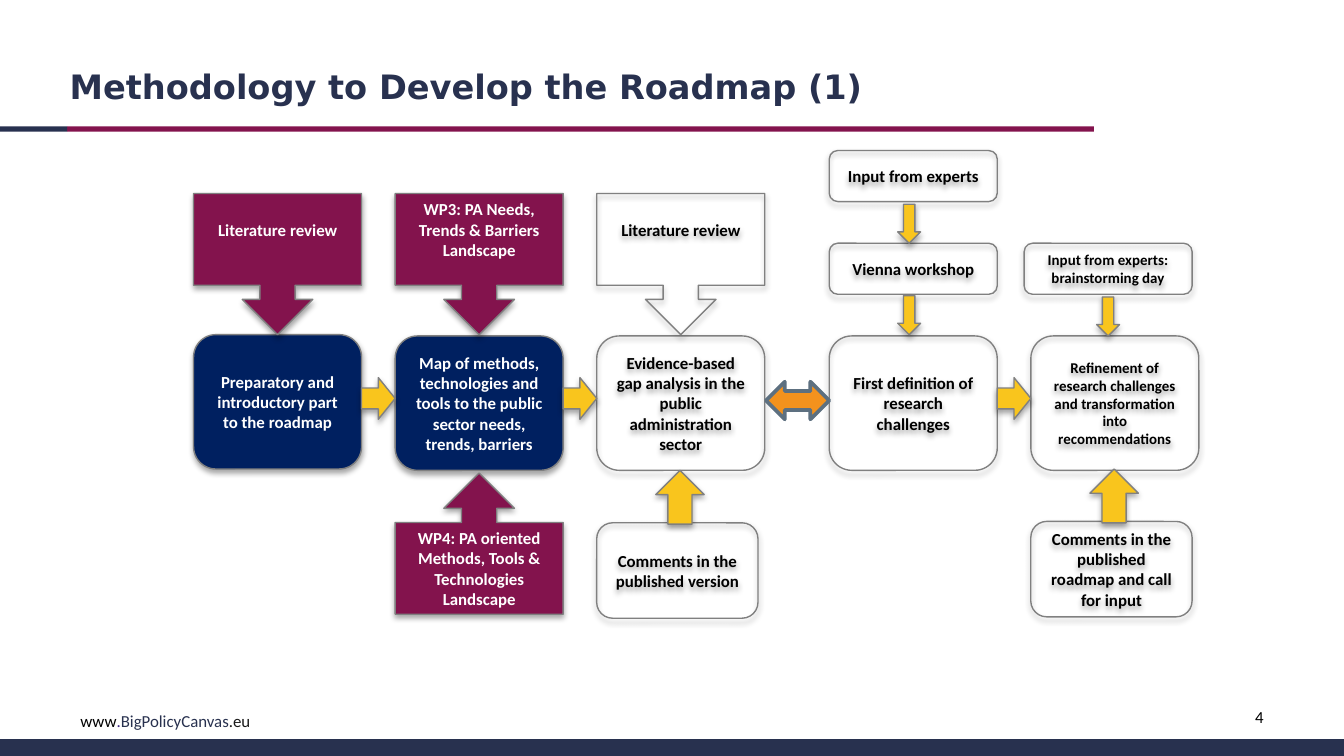
import dataclasses

import pptx
import pptx.dml.color
import pptx.enum.shapes
import pptx.enum.text
import pptx.oxml
import pptx.oxml.ns
import pptx.util

Inches = pptx.util.Inches
Shape = pptx.enum.shapes.MSO_SHAPE
Align = pptx.enum.text.PP_ALIGN
Anchor = pptx.enum.text.MSO_ANCHOR


@dataclasses.dataclass(frozen=True)
class Theme:
    ink: str = "28314F"
    plum: str = "83134D"
    navy: str = "002060"
    yellow: str = "F9C51D"
    orange: str = "F3921D"
    slate: str = "5D7080"
    gray: str = "808080"
    violet: str = "3E2984"
    charcoal: str = "191919"
    black: str = "000000"
    white: str = "FFFFFF"
    body_font: str = "Calibri"
    title_font: str = "DejaVu Sans"
    title_size: int = 18
    body_size: int = 9
    small_size: int = 8
    thin: float = 0.75
    thick: float = 2


THEME = Theme()


def rgb(color):
    return pptx.dml.color.RGBColor.from_string(color)


def write_text(shape, parts, size=THEME.body_size, font=THEME.body_font, bold=False,
               align=Align.LEFT, anchor=Anchor.TOP, margins=(0.1, 0.05, 0.1, 0.05)):
    frame = shape.text_frame
    frame.word_wrap = True
    frame.vertical_anchor = anchor
    (frame.margin_left, frame.margin_top,
     frame.margin_right, frame.margin_bottom) = map(Inches, margins)
    paragraph = frame.paragraphs[0]
    paragraph.alignment = align
    for text, color in parts:
        run = paragraph.add_run()
        run.text = text
        run.font.name = font
        run.font.size = pptx.util.Pt(size)
        run.font.bold = bold
        run.font.color.rgb = rgb(color)


class RoadmapSlide:
    def __init__(self, presentation, theme):
        self.theme = theme
        self.slide = presentation.slides.add_slide(presentation.slide_layouts[6])

    def shape(self, kind, box, fill=None, line=None, width=THEME.thin):
        shape = self.slide.shapes.add_shape(kind, *map(Inches, box))
        shape.shadow.inherit = False
        if fill:
            shape.fill.solid()
            shape.fill.fore_color.rgb = rgb(fill)
        else:
            shape.fill.background()
        if line:
            shape.line.color.rgb = rgb(line)
            shape.line.width = pptx.util.Pt(width)
        else:
            shape.line.fill.background()
        return shape

    def raise_shape(self, shape):
        effects = shape._element.spPr.find(pptx.oxml.ns.qn("a:effectLst"))
        effects.append(pptx.oxml.parse_xml(
            f'<a:outerShdw {pptx.oxml.ns.nsdecls("a")} blurRad="39370" dist="22860" '
            'dir="5400000" rotWithShape="0"><a:srgbClr val="000000">'
            '<a:alpha val="35000"/></a:srgbClr></a:outerShdw>'))

    def bar(self, box, fill):
        self.shape(Shape.RECTANGLE, box, fill)

    def text(self, box, parts, **style):
        write_text(self.slide.shapes.add_textbox(*map(Inches, box)), parts, **style)

    def node(self, box, text, fill=None, kind=Shape.ROUNDED_RECTANGLE,
             size=THEME.body_size, bottom=0.04):
        shape = self.shape(kind, box, fill, self.theme.gray)
        self.raise_shape(shape)
        color = self.theme.white if fill else self.theme.black
        write_text(shape, [(text, color)], size=size, bold=True, align=Align.CENTER,
                   anchor=Anchor.MIDDLE, margins=(0.07, 0.04, 0.07, bottom))

    def arrow(self, kind, box, rotation=0):
        shape = self.shape(kind, box, self.theme.yellow, self.theme.gray)
        shape.rotation = rotation
        self.raise_shape(shape)

    def double_arrow(self, box):
        self.shape(Shape.LEFT_RIGHT_ARROW, box, self.theme.orange,
                   self.theme.slate, self.theme.thick)


def main():
    presentation = pptx.Presentation()
    presentation.slide_width = Inches(10)
    presentation.slide_height = Inches(10 * 9 / 16)
    roadmap = RoadmapSlide(presentation, THEME)

    roadmap.bar((0.5, 0.94, 7.64, 0.04), THEME.plum)
    roadmap.bar((0, 0.94, 0.5, 0.04), THEME.ink)
    roadmap.bar((0, 5.5, 10, 0.14), THEME.ink)
    roadmap.text((0.42, 0.44, 6.58, 0.62),
                 [("Methodology to Develop the Roadmap (1)", THEME.ink)],
                 size=THEME.title_size, font=THEME.title_font, bold=True)
    roadmap.text((8.75, 5.21, 0.75, 0.25), [("4", THEME.black)], align=Align.RIGHT)
    roadmap.text((0.5, 5.26, 1.92, 0.2),
                 [("www", THEME.black), (".", THEME.violet),
                  ("BigPolicyCanvas", THEME.ink), (".eu", THEME.charcoal)],
                 anchor=Anchor.MIDDLE)

    width = 1.25
    preparation, mapping, gaps, definition, refinement = 1.44, 2.94, 4.44, 6.17, 7.67

    steps = [
        (preparation, 2.49, "Preparatory and introductory part to the roadmap",
         THEME.navy, THEME.body_size),
        (mapping, 2.5, "Map of methods, technologies and tools to the public sector "
         "needs, trends, barriers", THEME.navy, THEME.body_size),
        (gaps, 2.5, "Evidence-based gap analysis in the public administration sector",
         None, THEME.body_size),
        (definition, 2.5, "First definition of research challenges",
         None, THEME.body_size),
        (refinement, 2.5, "Refinement of research challenges and transformation into "
         "recommendations", None, THEME.small_size),
    ]
    for left, top, text, fill, size in steps:
        roadmap.node((left, top, width, 1), text, fill, size=size)

    for left in (preparation, mapping, definition):
        roadmap.arrow(Shape.RIGHT_ARROW, (left + width, 2.81, 0.25, 0.31))
    roadmap.double_arrow((5.7, 2.84, 0.47, 0.28))

    callouts = [
        (preparation, "Literature review", THEME.plum),
        (mapping, "WP3: PA Needs, Trends & Barriers Landscape", THEME.plum),
        (gaps, "Literature review", None),
    ]
    for left, text, fill in callouts:
        roadmap.node((left, 1.44, width, 1.05), text, fill,
                     kind=Shape.DOWN_ARROW_CALLOUT, bottom=0.19)
    roadmap.node((mapping, 3.52, width, 1.05),
                 "WP4: PA oriented Methods, Tools & Technologies Landscape",
                 THEME.plum, kind=Shape.UP_ARROW_CALLOUT)

    inputs = [
        (definition, 1.12, "Input from experts", THEME.body_size),
        (definition, 1.81, "Vienna workshop", THEME.body_size),
        (7.62, 1.81, "Input from experts: brainstorming day", THEME.small_size),
    ]
    for left, top, text, size in inputs:
        roadmap.node((left, top, width, 0.38), text, size=size)
    for left, top in ((6.68, 1.52), (6.68, 2.2), (8.16, 2.21)):
        roadmap.arrow(Shape.DOWN_ARROW, (left, top, 0.17, 0.29))

    comments = [
        (gaps, 3.89, "Comments in the published version"),
        (refinement, 3.88, "Comments in the published roadmap and call for input"),
    ]
    for left, top, text in comments:
        roadmap.node((left, top, 1.2, 0.71), text)
        roadmap.arrow(Shape.RIGHT_ARROW, (left + 0.42, top - 0.37, 0.4, 0.36), 270)

    presentation.save("out.pptx")


if __name__ == "__main__":
    main()
